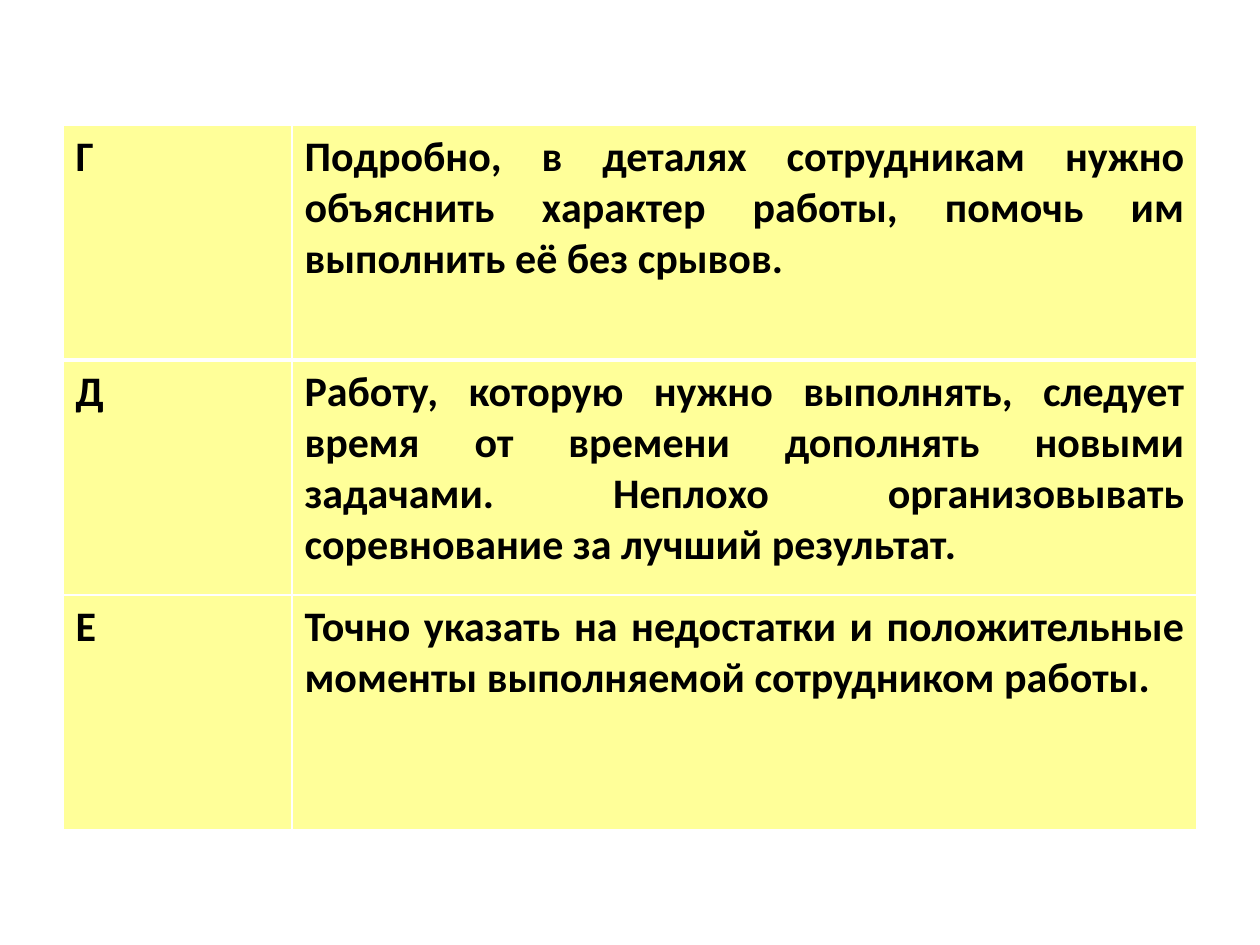
from dataclasses import dataclass

from lxml import etree
from pptx import Presentation
from pptx.dml.color import RGBColor
from pptx.enum.text import PP_ALIGN
from pptx.oxml.ns import qn
from pptx.util import Pt

JUSTIFY = PP_ALIGN.JUSTIFY
SCALE = 914400 / 126
THIN, THICK = 1, 3


@dataclass(frozen=True)
class Theme:
    font: str = "Calibri"
    size: int = 24
    ink: str = "000000"
    fill: str = "FFFF99"
    line: str = "FFFFFF"


def px(n):
    return round(n * SCALE)


def write(frame, text, *, font, size, color, bold=False, align=JUSTIFY):
    para = frame.paragraphs[0]
    para.alignment = align
    run = para.add_run()
    run.text = text
    run.font.name = font
    run.font.size = Pt(size)
    run.font.bold = bold
    run.font.color.rgb = RGBColor.from_string(color)


class Deck:
    def __init__(self, theme, wide, high):
        self.theme = theme
        self.file = Presentation()
        self.file.slide_width = px(wide)
        self.file.slide_height = px(high)
        self.slide = self.file.slides.add_slide(self.file.slide_layouts[6])

    def border(self, cell, sides):
        props = cell._tc.get_or_add_tcPr()
        for side, width in sides.items():
            line = etree.SubElement(props, qn(f"a:ln{side}"), w=str(Pt(width)))
            solid = etree.SubElement(line, qn("a:solidFill"))
            etree.SubElement(solid, qn("a:srgbClr"), val=self.theme.line)

    def cell(self, cell, text, top, base):
        style = self.theme
        self.border(cell, {"L": THIN, "R": THIN, "T": top, "B": base})
        cell.fill.solid()
        cell.fill.fore_color.rgb = RGBColor.from_string(style.fill)
        write(cell.text_frame, text, font=style.font, size=style.size,
              color=style.ink, bold=True)

    def table(self, left, top, cols, high, rows):
        frame = self.slide.shapes.add_table(
            len(rows), len(cols), px(left), px(top),
            px(sum(cols)), px(high * len(rows)))
        table = frame.table
        for col, width in zip(table.columns, cols):
            col.width = px(width)
        for i, texts in enumerate(rows):
            table.rows[i].height = px(high)
            for j, text in enumerate(texts):
                self.cell(table.cell(i, j), text,
                          THICK if i == 1 else THIN,
                          THICK if i == 0 else THIN)


def main():
    deck = Deck(Theme(), 1260, 945)
    tips = [
        ("Г", "Подробно, в деталях сотрудникам нужно объяснить характер "
              "работы, помочь им выполнить её без срывов."),
        ("Д", "Работу, которую нужно выполнять, следует время от времени "
              "дополнять новыми задачами. Неплохо организовывать "
              "соревнование за лучший результат."),
        ("Е", "Точно указать на недостатки и положительные моменты "
              "выполняемой сотрудником работы."),
    ]
    deck.table(63, 125, (229, 905), 235, tips)
    deck.file.save("out.pptx")


if __name__ == "__main__":
    main()
